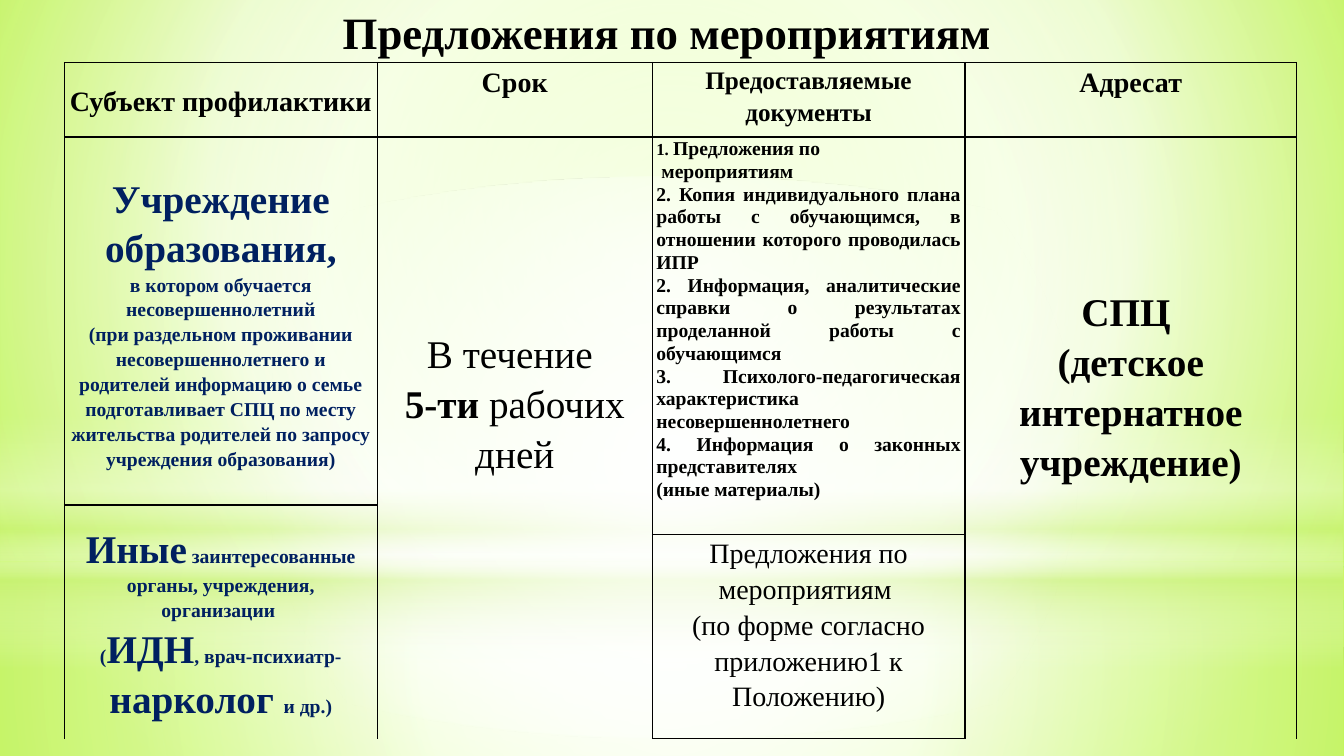
from dataclasses import dataclass, field

import lxml.etree
import pptx
import pptx.dml.color
import pptx.enum.shapes
import pptx.enum.text
import pptx.oxml
import pptx.oxml.ns
import pptx.util

Inches = pptx.util.Inches
Pt = pptx.util.Pt
Align = pptx.enum.text.PP_ALIGN
Anchor = pptx.enum.text.MSO_ANCHOR
Preset = pptx.enum.shapes.MSO_SHAPE
qn = pptx.oxml.ns.qn


@dataclass(frozen=True)
class Theme:
    font: str = "Times New Roman"
    black: str = "000000"
    navy: str = "002060"
    white: str = "FFFFFF"
    lime: str = "CAF278"
    backdrop: tuple = ((0, "CAFF60"), (60, "F7FFE7"), (100, "B7FF29"))
    title: int = 32
    large: int = 28
    medium: int = 20
    heading: int = 18
    body: int = 14
    small: int = 12
    line_spacing: float = 1.15
    tight_spacing: float = 1.05
    border: float = 1


THEME = Theme()
NO_GRID_STYLE = "{2D5ABB26-0587-4C30-8999-92F81FD0307C}"
CENTRE = (50, 50, 50, 50)


@dataclass
class CellText:
    """Paragraphs are lists of (text, size, bold) runs."""
    paragraphs: list
    rows: int = 1
    color: str = THEME.black
    align: Align = Align.CENTER
    anchor: Anchor = Anchor.TOP
    top: float = 0
    line_spacing: float = THEME.line_spacing
    indents: dict = field(default_factory=dict)


def bold(text, size):
    return [(text, size, True)]


def plain(text, size):
    return [(text, size, False)]


SUBJECT = dict(color=THEME.navy, anchor=Anchor.MIDDLE)
HEADINGS = [
    CellText([bold("Субъект профилактики", THEME.medium)], anchor=Anchor.MIDDLE),
    CellText([bold("Срок", THEME.medium)]),
    CellText([bold("Предоставляемые документы", THEME.heading)]),
    CellText([bold("Адресат", THEME.medium)]),
]
INSTITUTION = CellText([
    bold("Учреждение образования,", THEME.large),
    bold("в котором обучается несовершеннолетний", THEME.body),
    bold("(при раздельном проживании несовершеннолетнего и родителей информацию о семье "
         "подготавливает СПЦ по месту жительства родителей по запросу учреждения образования)",
         THEME.body),
], **SUBJECT)
OTHERS = CellText([
    bold("Иные", THEME.large)
    + bold(" заинтересованные органы, учреждения, организации ", THEME.body),
    bold("(", THEME.body) + bold("ИДН", THEME.large) + bold(", врач-психиатр-", THEME.body)
    + bold("нарколог ", THEME.large) + bold("и др.)", THEME.body),
], rows=2, **SUBJECT)
DEADLINE = CellText([
    plain("В течение ", THEME.large),
    bold("5-ти ", THEME.large) + plain("рабочих дней", THEME.large),
], rows=3, top=1.89)
DOCUMENTS = CellText([
    bold("1. ", THEME.small) + bold("Предложения по", THEME.body),
    *(bold(text, THEME.body) for text in (
        "мероприятиям",
        "2. Копия индивидуального плана работы с обучающимся, в отношении которого "
        "проводилась ИПР",
        "2. Информация, аналитические справки о результатах проделанной работы с обучающимся",
        "3. Психолого-педагогическая характеристика несовершеннолетнего",
        "4. Информация о законных представителях",
        "(иные материалы)",
    )),
], rows=2, align=Align.JUSTIFY, line_spacing=THEME.tight_spacing, indents={1: 0.05})
ADDRESSEE = CellText([
    bold("СПЦ ", THEME.large),
    bold("(детское интернатное учреждение)", THEME.large),
], rows=3, top=1.47)
PROPOSALS = CellText([
    plain("Предложения по мероприятиям ", THEME.medium),
    plain("(по форме согласно приложению1 к Положению)", THEME.medium),
])
ROWS = [
    HEADINGS,
    [INSTITUTION, DEADLINE, DOCUMENTS, ADDRESSEE],
    [OTHERS, None, None, None],
    [None, None, PROPOSALS, None],
]
COLUMN_WIDTHS = (3.1, 2.73, 3.1, 3.29)
ROW_HEIGHTS = (0.74, 3.65, 0.29, 2.03)


def set_gradient(properties, stops, focus=None):
    """Swap a solid fill for a gradient: circular around focus, or top to bottom."""
    gradient = pptx.oxml.parse_xml(
        f'<a:gradFill {pptx.oxml.ns.nsdecls("a")} rotWithShape="1"><a:gsLst/></a:gradFill>')
    for position, color, *alpha in stops:
        stop = lxml.etree.SubElement(gradient[0], qn("a:gs"), pos=str(position * 1000))
        paint = lxml.etree.SubElement(stop, qn("a:srgbClr"), val=color)
        for percent in alpha:
            lxml.etree.SubElement(paint, qn("a:alpha"), val=str(percent * 1000))
    if focus:
        circle = lxml.etree.SubElement(gradient, qn("a:path"))
        circle.set("path", "circle")
        sides = {side: str(value * 1000) for side, value in zip("ltrb", focus)}
        lxml.etree.SubElement(circle, qn("a:fillToRect"), **sides)
    else:
        lxml.etree.SubElement(gradient, qn("a:lin"), ang="5400000", scaled="0")
    properties.replace(properties.find(qn("a:solidFill")), gradient)


def add_backdrop(slide, width):
    white, lime = THEME.white, THEME.lime
    slide.background.fill.solid()
    slide.background.fill.fore_color.rgb = pptx.dml.color.RGBColor.from_string(white)
    set_gradient(next(slide.element.iter(qn("p:bgPr"))), THEME.backdrop, (20, 10, 20, 60))
    glows = [
        (Preset.RECTANGLE, 5.58, 1.92,
         ((0, white, 91), (37, white, 76), (100, lime, 79)), CENTRE),
        (Preset.RECTANGLE, 0, 5.58,
         ((0, white, 89), (48, white, 62), (100, lime, 79)), CENTRE),
        (Preset.RECTANGLE, 4.12, 2.5,
         ((0, white, 0), (29, white, 30), (45, lime, 40), (55, white, 26),
          (65, lime, 60), (100, white, 0)), None),
        (Preset.OVAL, 1.75, 5.58, ((0, white, 100), (56, white, 0)), CENTRE),
    ]
    for preset, top, height, stops, focus in glows:
        glow = slide.shapes.add_shape(preset, 0, Inches(top), Inches(width), Inches(height))
        glow.shadow.inherit = False
        glow.line.fill.background()
        glow.fill.solid()
        set_gradient(glow.element.spPr, stops, focus)


def style_font(font, size, is_bold, color):
    font.name = THEME.font
    font.size = Pt(size)
    font.bold = is_bold
    font.color.rgb = pptx.dml.color.RGBColor.from_string(color)


def add_title(slide, left, top, width, height):
    frame = slide.shapes.add_textbox(*map(Inches, (left, top, width, height))).text_frame
    frame.word_wrap = True
    frame.vertical_anchor = Anchor.MIDDLE
    paragraph = frame.paragraphs[0]
    paragraph.text = "Предложения по мероприятиям "
    paragraph.alignment = Align.CENTER
    style_font(paragraph.font, THEME.title, True, THEME.black)


def fill_cell(cell, content):
    cell.vertical_anchor = content.anchor
    cell.margin_top = Inches(content.top)
    frame = cell.text_frame
    for index, runs in enumerate(content.paragraphs):
        paragraph = frame.add_paragraph() if index else frame.paragraphs[0]
        paragraph.alignment = content.align
        paragraph.line_spacing = content.line_spacing
        if index in content.indents:
            properties = paragraph._p.get_or_add_pPr()
            properties.set("marL", str(Inches(content.indents[index])))
        for text, size, is_bold in runs:
            run = paragraph.add_run()
            run.text = text
            style_font(run.font, size, is_bold, content.color)


def draw_borders(cell, edges):
    properties = cell._tc.get_or_add_tcPr()
    for position, edge in enumerate(edges):
        properties.insert(position, pptx.oxml.parse_xml(
            f'<a:ln{edge} {pptx.oxml.ns.nsdecls("a")} w="{Pt(THEME.border)}"><a:solidFill>'
            f'<a:srgbClr val="{THEME.black}"/></a:solidFill></a:ln{edge}>'))


def add_measures_table(slide, left, top):
    box = (left, top, sum(COLUMN_WIDTHS), sum(ROW_HEIGHTS))
    table = slide.shapes.add_table(len(ROWS), len(COLUMN_WIDTHS), *map(Inches, box)).table
    table.first_row = table.horz_banding = False
    next(table._tbl.iter(qn("a:tableStyleId"))).text = NO_GRID_STYLE
    for column, width in zip(table.columns, COLUMN_WIDTHS):
        column.width = Inches(width)
    for row, height in zip(table.rows, ROW_HEIGHTS):
        row.height = Inches(height)
    for r, contents in enumerate(ROWS):
        for c, content in enumerate(contents):
            cell = table.cell(r, c)
            cell.fill.background()
            cell.margin_left = cell.margin_right = Inches(0.04)
            cell.margin_top = cell.margin_bottom = 0
            if content:
                if content.rows > 1:
                    cell.merge(table.cell(r + content.rows - 1, c))
                fill_cell(cell, content)
            continues = r + 1 < len(ROWS) and table.cell(r + 1, c).is_spanned
            draw_borders(cell, "LR" + "T" * (not cell.is_spanned) + "B" * (not continues))


def main():
    presentation = pptx.Presentation()
    presentation.slide_width = Inches(13.33)
    presentation.slide_height = Inches(7.5)
    slide = presentation.slides.add_slide(presentation.slide_layouts[6])
    add_backdrop(slide, 13.33)
    add_title(slide, 0.67, 0, 12, 0.62)
    add_measures_table(slide, 0.64, 0.62)
    presentation.save("out.pptx")


if __name__ == "__main__":
    main()
